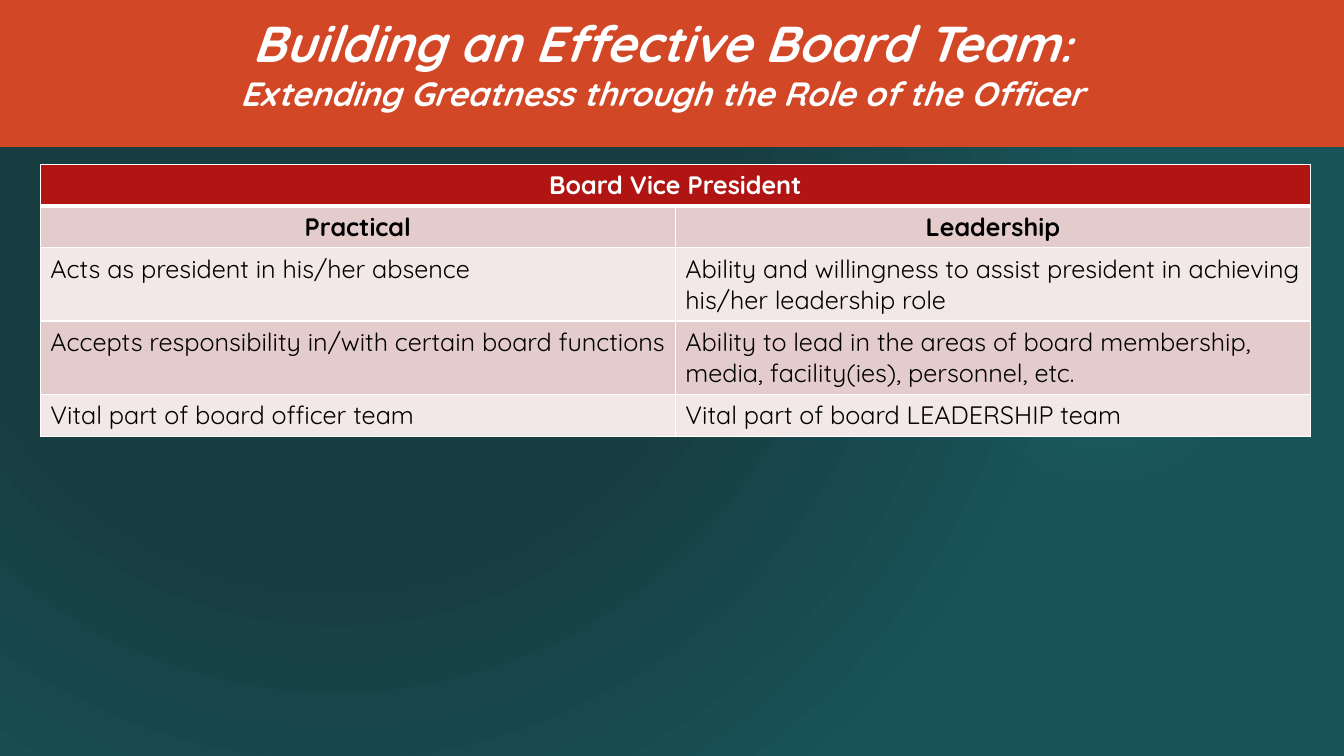
from lxml import etree
from pptx import Presentation
from pptx import util as u
from pptx.dml.color import RGBColor
from pptx.enum import shapes, text
from pptx.oxml import ns

COLORS = {
    "deep": "173D40", "teal": "185358", "glow": "50B9C1", "orange": "D24726",
    "red": "B01513", "rose": "E4CCCC", "blush": "F2E8E7",
    "white": "FFFFFF", "black": "000000",
}
FONT = "Quicksand"
ROWS = [
    ("Practical", "Leadership"),
    ("Acts as president in his/her absence",
     "Ability and willingness to assist president in achieving his/her leadership role"),
    ("Accepts responsibility in/with certain board functions",
     "Ability to lead in the areas of board membership, media, facility(ies), personnel, etc."),
    ("Vital part of board officer team", "Vital part of board LEADERSHIP team"),
]


def write(para, content, size=18, color="black", bold=False, italic=False, align="LEFT"):
    """Add one formatted run of text to a paragraph."""
    para.alignment = getattr(text.PP_ALIGN, align)
    span = para.add_run()
    span.text = content
    span.font.name = FONT
    span.font.size = u.Pt(size)
    span.font.bold = bold
    span.font.italic = italic
    span.font.color.rgb = RGBColor.from_string(COLORS[color])


class BoardSlide:
    """Hold the style and the current page, and draw each kind of element."""

    def __init__(self, deck):
        """Add a page with a title to the deck."""
        self.page = deck.slides.add_slide(deck.slide_layouts[5])

    def paint(self, fill, color):
        """Give a fill one solid colour."""
        fill.solid()
        fill.fore_color.rgb = RGBColor.from_string(COLORS[color])

    def radial(self, parent, stops, focus):
        """Replace the solid fill of an element with a circular gradient."""
        gradient = etree.Element(ns.qn("a:gradFill"), rotWithShape="1")
        stop_list = etree.SubElement(gradient, ns.qn("a:gsLst"))
        for position, color, opacity in stops:
            stop = etree.SubElement(stop_list, ns.qn("a:gs"), pos=str(position * 1000))
            tint = etree.SubElement(stop, ns.qn("a:srgbClr"), val=COLORS[color])
            if opacity < 100:
                etree.SubElement(tint, ns.qn("a:alpha"), val=str(opacity * 1000))
        circle = etree.SubElement(gradient, ns.qn("a:path"), path="circle")
        edges = {side: str(share * 1000) for side, share in zip("ltrb", focus)}
        etree.SubElement(circle, ns.qn("a:fillToRect"), edges)
        parent.replace(parent.find(ns.qn("a:solidFill")), gradient)

    def background(self, stops, focus):
        """Fill the page with a circular gradient."""
        self.paint(self.page.background.fill, stops[0][1])
        parent = next(self.page.element.iter(ns.qn("p:bgPr")))
        self.radial(parent, stops, focus)

    def shape(self, kind, left, top, width, height, color):
        """Draw a plain preset shape without outline or shadow."""
        box = self.page.shapes.add_shape(kind, *map(u.Pt, (left, top, width, height)))
        box.shadow.inherit = False
        box.line.fill.background()
        self.paint(box.fill, color)
        return box

    def title(self, left, top, width, height, lines):
        """Place the title in front, with one list of spans for each line."""
        box = self.page.shapes.title
        box.left, box.top, box.width, box.height = map(u.Pt, (left, top, width, height))
        box.element.getparent().append(box.element)
        frame = box.text_frame
        frame.word_wrap = True
        frame.auto_size = text.MSO_AUTO_SIZE.NONE
        frame.vertical_anchor = text.MSO_ANCHOR.TOP
        para = frame.paragraphs[0]
        for number, spans in enumerate(lines):
            if number:
                para.add_line_break()
            for content, size in spans:
                write(para, content, size=size, color="white", bold=True,
                      italic=True, align="CENTER")

    def borders(self, cell, top, bottom):
        """Draw white cell borders with the given top and bottom widths."""
        properties = cell._tc.get_or_add_tcPr()
        widths = {"lnL": 1, "lnR": 1, "lnT": top, "lnB": bottom}
        for index, (side, width) in enumerate(widths.items()):
            line = etree.Element(ns.qn(f"a:{side}"), w=str(u.Pt(width)))
            fill = etree.SubElement(line, ns.qn("a:solidFill"))
            etree.SubElement(fill, ns.qn("a:srgbClr"), val=COLORS["white"])
            properties.insert(index, line)

    def table(self, left, top, width, height, row_height, heading, rows):
        """Draw a table with a merged heading and alternating row colours."""
        columns = len(rows[0])
        table = self.page.shapes.add_table(
            len(rows) + 1, columns, *map(u.Pt, (left, top, width, height))).table
        table.horz_banding = False
        for column in table.columns:
            column.width = u.Pt(width / columns)
        for row in table.rows:
            row.height = u.Pt(row_height)
        table.cell(0, 0).merge(table.cell(0, columns - 1))
        for number, contents in enumerate([(heading, "")] + rows):
            band = "rose" if number % 2 else "blush"
            for column, content in enumerate(contents):
                cell = table.cell(number, column)
                self.paint(cell.fill, band if number else "red")
                self.borders(cell, 3 if number == 1 else 1, 1 if number else 3)
                if content:
                    write(cell.text_frame.paragraphs[0], content,
                          color="black" if number else "white", bold=number < 2,
                          align="CENTER" if number < 2 else "LEFT")


def main():
    """Build the slide and save the deck."""
    deck = Presentation()
    deck.slide_width, deck.slide_height = u.Pt(960), u.Pt(540)
    slide = BoardSlide(deck)
    slide.background([(48, "deep", 100), (100, "teal", 100)], (50, 50, 100, 100))
    glow = slide.shape(shapes.MSO_SHAPE.OVAL, 677.5, 131.8, 221.8, 221.8, "glow")
    slide.radial(glow.element.spPr,
                 [(0, "glow", 7), (36, "glow", 6), (69, "glow", 0)], (50, 50, 50, 50))
    slide.shape(shapes.MSO_SHAPE.RECTANGLE, 0, 0, 960, 105, "orange")
    slide.title(123.8, 5, 697.7, 138.2, [
        [("Building an Effective Board Team", 36), (":", 32)],
        [("Extending Greatness through the Role of the Officer", 24)],
    ])
    slide.table(28.8, 117.4, 907.2, 188.6, 29.2, "Board Vice President", ROWS)
    deck.save("out.pptx")


if __name__ == "__main__":
    main()
